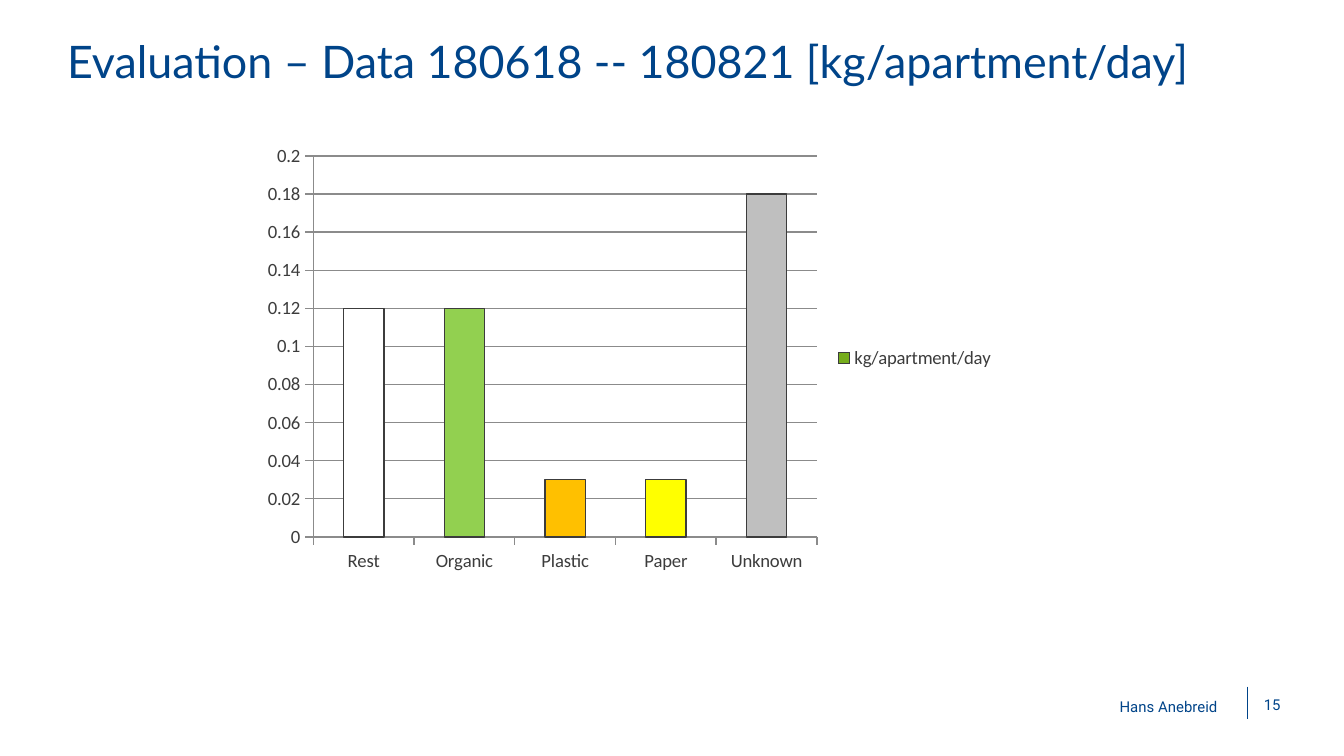
from lxml import etree
from pptx import Presentation
from pptx.chart.data import CategoryChartData
from pptx.dml.color import RGBColor
from pptx.enum.chart import XL_CHART_TYPE, XL_LEGEND_POSITION, XL_TICK_MARK
from pptx.enum.shapes import MSO_CONNECTOR
from pptx.enum.text import MSO_ANCHOR, PP_ALIGN
from pptx.oxml.ns import qn
from pptx.util import Pt

COLUMN = XL_CHART_TYPE.COLUMN_CLUSTERED
LEGEND_RIGHT = XL_LEGEND_POSITION.RIGHT
TICK_OUTSIDE = XL_TICK_MARK.OUTSIDE
STRAIGHT = MSO_CONNECTOR.STRAIGHT
TOP, MIDDLE = MSO_ANCHOR.TOP, MSO_ANCHOR.MIDDLE
LEFT, RIGHT = PP_ALIGN.LEFT, PP_ALIGN.RIGHT

BLUE, DARK, GREY, GREEN = "004489", "3C3C3C", "8B8B8B", "76AD1C"

TITLE_BOX = (36, 14.4, 650.9, 41.8)
CHART_BOX = (135.4, 73.2, 404.6, 237.6)
FOOTER_BOX = (242.6, 365.8, 443.5, 23)
NUMBER_WIDTH = 33.8

WASTE = [
    ("Rest", 0.12, "FFFFFF"),
    ("Organic", 0.12, "92D050"),
    ("Plastic", 0.03, "FFC000"),
    ("Paper", 0.03, "FFFF00"),
    ("Unknown", 0.18, "BFBFBF"),
]


def color(value):
    return RGBColor.from_string(value)


def style_line(line, value, width):
    line.color.rgb = color(value)
    line.width = Pt(width)


def add_text(slide, box, text, font_name, size, align=LEFT, anchor=TOP, top=0, bottom=0):
    shape = slide.shapes.add_textbox(*map(Pt, box))
    frame = shape.text_frame
    frame.word_wrap = True
    frame.vertical_anchor = anchor
    frame.margin_left = frame.margin_right = 0
    frame.margin_top, frame.margin_bottom = Pt(top), Pt(bottom)
    frame.text = text
    paragraph = frame.paragraphs[0]
    paragraph.alignment = align
    font = paragraph.runs[0].font
    font.name, font.size = font_name, Pt(size)
    font.color.rgb = color(BLUE)
    return paragraph


def add_title(slide, box):
    add_text(slide, box, "Evaluation – Data 180618 -- 180821 [kg/apartment/day]",
             "Lato", 24, top=3.6, bottom=3.6)


def add_waste_chart(slide, box):
    names, values, fills = zip(*WASTE)
    data = CategoryChartData()
    data.categories = names
    data.add_series("kg/apartment/day", values)
    chart = slide.shapes.add_chart(COLUMN, *map(Pt, box), data).chart
    chart.has_title = False
    chart.font.name, chart.font.size = "Calibri", Pt(10)
    chart.font.color.rgb = color(DARK)
    chart.has_legend = True
    chart.legend.position = LEGEND_RIGHT
    chart.legend.include_in_layout = False

    for axis in (chart.category_axis, chart.value_axis):
        axis.major_tick_mark = TICK_OUTSIDE
        style_line(axis.format.line, GREY, 0.75)
    chart.value_axis.minimum_scale = 0
    chart.value_axis.maximum_scale = 0.2
    chart.value_axis.major_unit = 0.02
    style_line(chart.value_axis.major_gridlines.format.line, GREY, 0.75)

    plot = chart.plots[0]
    plot.vary_by_categories = False
    plot.gap_width = 150
    series = plot.series[0]
    bars = [(series.format, GREEN)]
    bars += [(series.points[i].format, fill) for i, fill in enumerate(fills)]
    for bar_format, fill in bars:
        bar_format.fill.solid()
        bar_format.fill.fore_color.rgb = color(fill)
        style_line(bar_format.line, DARK, 0.75)


def add_footer(slide, box):
    """Place the author, a divider and the page number from left to right."""
    left, top, width, height = box
    author_width = width - NUMBER_WIDTH
    number_left = left + author_width
    divider_x = number_left + 16
    divider = slide.shapes.add_connector(
        STRAIGHT, Pt(divider_x), Pt(top + 2.1), Pt(divider_x), Pt(top + 19.4))
    style_line(divider.line, BLUE, 0.5)
    etree.SubElement(divider._element.spPr, qn("a:effectLst"))
    add_text(slide, (number_left, top, NUMBER_WIDTH, height), "15", "Roboto", 8, RIGHT, MIDDLE)
    author = add_text(slide, (left, top, author_width, height), "Hans Anebreid",
                      "Roboto", 8, RIGHT, top=2.9)
    author.line_spacing = 1.5


def main():
    presentation = Presentation()
    presentation.slide_width, presentation.slide_height = Pt(720), Pt(405)
    slide = presentation.slides.add_slide(presentation.slide_layouts[6])
    add_title(slide, TITLE_BOX)
    add_waste_chart(slide, CHART_BOX)
    add_footer(slide, FOOTER_BOX)
    presentation.save("out.pptx")


if __name__ == "__main__":
    main()
